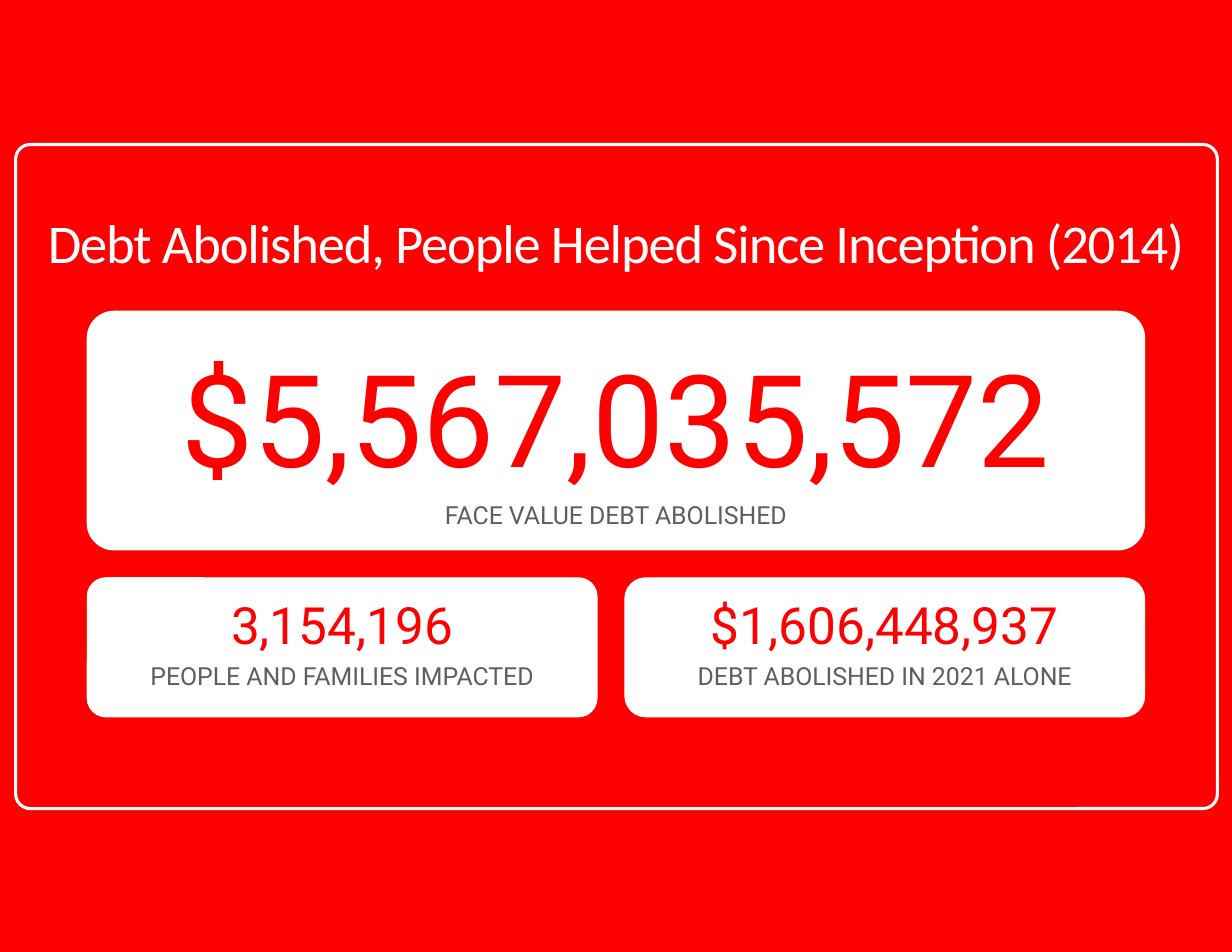
from pptx import Presentation
from pptx import util as u
from pptx.dml.color import RGBColor
from pptx.enum import shapes, text

RED = RGBColor(0xFF, 0x00, 0x00)
WHITE = RGBColor(0xFF, 0xFF, 0xFF)
GRAY = RGBColor(0x5E, 0x5E, 0x5E)

WIDTH, HEIGHT = 11, 8.5
LEFT, RIGHT, GAP = 0.78, 10.22, 0.25
SPLIT = 5.33  # right edge of the first small card


def add_panel(page, box, corner):
    """Add a rounded rectangle with a white outline."""
    panel = page.shapes.add_shape(
        shapes.MSO_SHAPE.ROUNDED_RECTANGLE, *map(u.Inches, box))
    panel.adjustments[0] = corner
    panel.shadow.inherit = False
    panel.line.color.rgb = WHITE
    return panel


def add_title(page, box, wording):
    title = page.shapes.title
    title.left, title.top, title.width, title.height = map(u.Inches, box)
    frame = title.text_frame
    frame.auto_size = text.MSO_AUTO_SIZE.NONE
    frame.vertical_anchor = text.MSO_ANCHOR.TOP
    frame.margin_left = frame.margin_right = u.Inches(0.02)
    frame.margin_top = frame.margin_bottom = u.Inches(0.02)
    frame.text = wording
    para = frame.paragraphs[0]
    para.alignment = text.PP_ALIGN.CENTER
    para.line_spacing = 0.8
    span = para.runs[0]
    span.font.name = "Calibri"
    span.font.size = u.Pt(35.1)
    span.font.color.rgb = WHITE
    span.font._element.set("spc", "-70")  # tighter letters


def add_card(page, box, corner, figure, label, figure_size):
    """Add a white card with a large figure above its label."""
    card = add_panel(page, box, corner)
    card.fill.solid()
    card.fill.fore_color.rgb = WHITE
    card.line.width = 0
    frame = card.text_frame
    frame.word_wrap = True
    frame.vertical_anchor = text.MSO_ANCHOR.MIDDLE
    frame.margin_left = frame.margin_top = frame.margin_right = 0
    frame.margin_bottom = u.Inches(0.21)
    frame.text = f"{figure}\n{label}"
    styles = ((figure_size, RED), (16, GRAY))
    for para, (size, color) in zip(frame.paragraphs, styles):
        para.alignment = text.PP_ALIGN.CENTER
        para.line_spacing = 1.2
        font = para.runs[0].font
        font.name = "Roboto"
        font.size = u.Pt(size)
        font.color.rgb = color


def add_frame(page, box):
    outline = add_panel(page, box, 0.022)
    outline.fill.background()
    outline.line.width = u.Pt(2)


def main():
    deck = Presentation()
    deck.slide_width, deck.slide_height = u.Inches(WIDTH), u.Inches(HEIGHT)
    page = deck.slides.add_slide(deck.slide_layouts[5])
    page.background.fill.solid()
    page.background.fill.fore_color.rgb = RED

    # Heading
    add_title(page, (0, 1.96, WIDTH, 0.65),
              "Debt Abolished, People Helped Since Inception (2014)")

    # Main figure, then two smaller ones side by side
    second = SPLIT + GAP
    cards = (
        ((LEFT, 2.78, RIGHT - LEFT, 2.13), 0.112,
         "$5,567,035,572", "FACE VALUE DEBT ABOLISHED", 82.5),
        ((LEFT, 5.16, SPLIT - LEFT, 1.24), 0.133,
         "3,154,196", "PEOPLE AND FAMILIES IMPACTED", 33),
        ((second, 5.16, RIGHT - second, 1.24), 0.15,
         "$1,606,448,937", "DEBT ABOLISHED IN 2021 ALONE", 33),
    )
    for card in cards:
        add_card(page, *card)

    # Outer border
    add_frame(page, (0.14, 1.29, 10.73, 5.93))
    deck.save("out.pptx")


if __name__ == "__main__":
    main()
